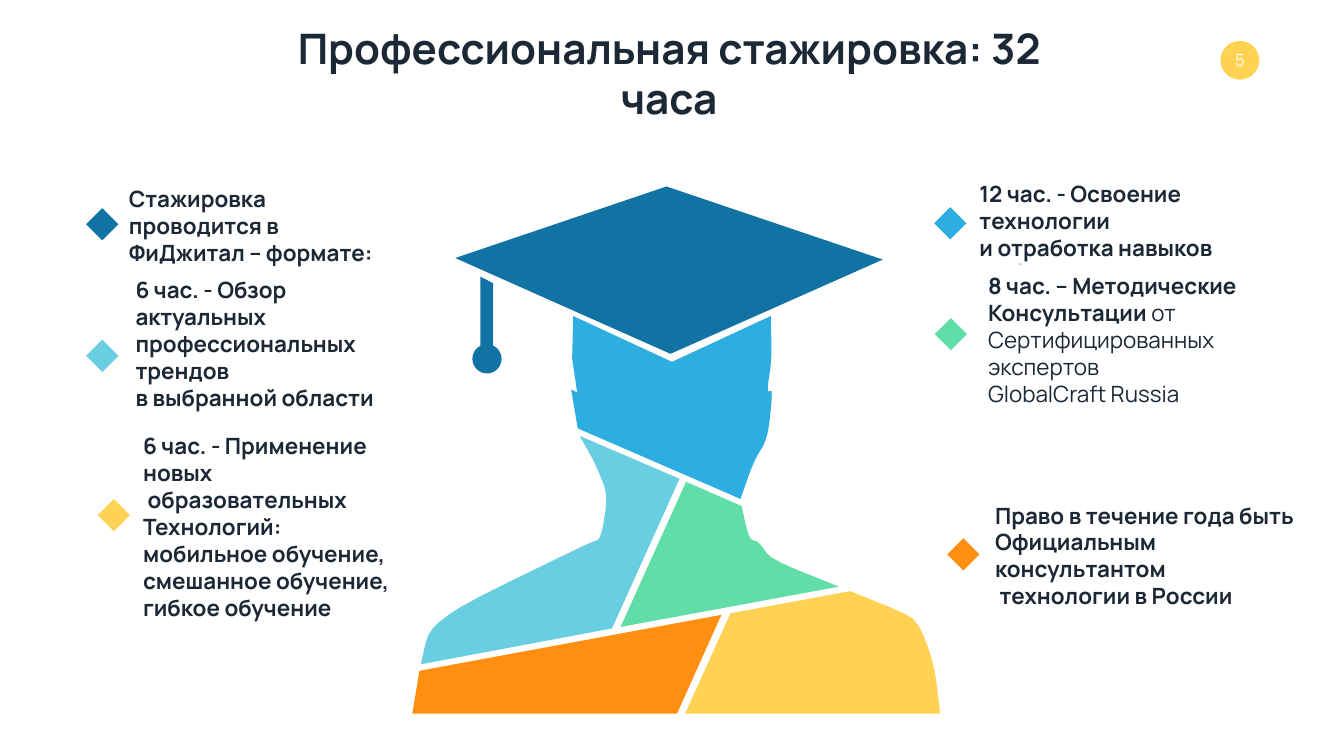
from dataclasses import dataclass
from itertools import pairwise

from pptx import Presentation
from pptx.dml.color import RGBColor
from pptx.enum.shapes import MSO_SHAPE
from pptx.enum.text import MSO_ANCHOR, PP_ALIGN
from pptx.shapes.base import BaseShape
from pptx.util import Inches, Pt

Point = tuple[float, float]

INK = "1C2835"
NAVY = "1073A3"
BLUE = "2DADE0"
AQUA = "6ACEE3"
GREEN = "61DDA8"
ORANGE = "FF8F10"
YELLOW = "FFD253"
DIAMOND_SIZE = 0.64
HEAD_AXIS = 13.33
SMOOTHING_PASSES = 2
CORNER_CUT = 0.2


@dataclass(frozen=True)
class Box:
    left: float
    top: float
    width: float
    height: float

    def lengths(self) -> tuple:
        return tuple(Inches(v) for v in (self.left, self.top, self.width, self.height))


@dataclass(frozen=True)
class Milestone:
    color: str
    diamond_left: float
    diamond_top: float
    box: Box
    lines: tuple[str, ...]


@dataclass(frozen=True)
class Piece:
    color: str
    cuts: tuple[Point, ...]
    silhouette: tuple[Point, ...] = ()


MILESTONES = (
    Milestone(NAVY, 1.71, 4.13, Box(2.46, 3.89, 5.36, 1.18),
              ("Стажировка проводится в", "ФиДжитал – формате:")),
    Milestone(AQUA, 1.71, 6.74, Box(2.59, 5.96, 5.83, 1.72),
              ("6 час. - Обзор актуальных", "профессиональных трендов",
               "в выбранной области")),
    Milestone(YELLOW, 1.94, 9.9, Box(2.74, 8.78, 5.47, 3.33),
              ("6 час. - Применение новых", " образовательных", "Технологий:",
               "мобильное обучение,", "смешанное обучение,", "гибкое обучение")),
    Milestone(BLUE, 18.53, 4.11, Box(19.33, 3.79, 6.17, 1.18),
              ("12 час. - Освоение технологии", "и отработка навыков")),
    Milestone(GREEN, 18.54, 6.31, Box(19.5, 5.61, 6.31, 2.26),
              ("8 час. – Методические", "Консультации |от",
               "|Сертифицированных экспертов", "|GlobalCraft Russia")),
    Milestone(ORANGE, 18.79, 10.68, Box(19.64, 10.16, 6.2, 1.72),
              ("Право в течение года быть", "Официальным консультантом",
               " технологии в России")),
)

TEMPLE_AND_EAR = ((15.29, 6.27), (15.31, 7.11), (15.21, 7.79), (15.33, 7.73))
LEFT_TEMPLE_AND_EAR = tuple((round(2 * HEAD_AXIS - x, 2), y) for x, y in TEMPLE_AND_EAR)
JAW = ((15.23, 8.69), (14.94, 9.18), (14.69, 9.9))

GRADUATE = (
    Piece(NAVY, ((13.22, 3.7), (9.03, 5.12), (13.3, 7.02), (17.51, 5.15))),
    Piece(NAVY, ((9.53, 5.49), (9.53, 6.95), (9.78, 6.95), (9.78, 5.62))),
    Piece(BLUE, ((11.46, 8.5), *reversed(LEFT_TEMPLE_AND_EAR), (HEAD_AXIS, 7.18)),
          TEMPLE_AND_EAR + JAW),
    Piece(AQUA, ((12.14, 12.47), (13.48, 9.5)),
          ((11.5, 8.65), (11.8, 9.18), (12.06, 9.82), (11.92, 10.7), (11.71, 10.76),
           (9.17, 12), (8.5, 12.5), (8.35, 13.18))),
    Piece(GREEN, ((13.61, 9.56), (12.31, 12.44)),
          ((16.64, 11.64), (15.3, 11.1), (15.05, 10.75), (14.86, 10.7), (14.71, 10.04))),
    Piece(ORANGE, ((14.31, 12.2), (8.32, 13.31), (8.18, 14.16), (13.43, 14.16))),
    Piece(YELLOW, ((14.49, 12.17), (13.59, 14.16)),
          ((18.65, 14.16), (18.53, 13.17), (18.2, 12.3), (17.64, 12.04), (16.86, 11.73))),
)


def rgb(color: str) -> RGBColor:
    return RGBColor.from_string(color)


def paint(shape: BaseShape, color: str) -> None:
    shape.fill.solid()
    shape.fill.fore_color.rgb = rgb(color)
    shape.line.fill.background()
    shape.shadow.inherit = False


def style_font(font, size: float, color: str, bold: bool = False,
               typeface: str = "Manrope") -> None:
    font.name = typeface
    font.size = Pt(size)
    font.bold = bold
    font.color.rgb = rgb(color)


def between(start: Point, end: Point, share: float) -> Point:
    return (start[0] + (end[0] - start[0]) * share,
            start[1] + (end[1] - start[1]) * share)


def smooth(points: tuple[Point, ...]) -> list[Point]:
    curve = list(points)
    for _ in range(SMOOTHING_PASSES if points else 0):
        softened = [between(start, end, share) for start, end in pairwise(curve)
                    for share in (CORNER_CUT, 1 - CORNER_CUT)]
        curve = [curve[0], *softened[1:-1], curve[-1]]
    return curve


def draw_piece(shapes, piece: Piece) -> None:
    outline = [(Inches(x), Inches(y))
               for x, y in [*piece.cuts, *smooth(piece.silhouette)]]
    builder = shapes.build_freeform(*outline[0])
    builder.add_line_segments(outline[1:])
    paint(builder.convert_to_shape(), piece.color)


def add_text(slide, box: Box, lines: tuple[str, ...], size: float, color: str = INK,
             typeface: str = "Manrope", anchor: MSO_ANCHOR = MSO_ANCHOR.TOP):
    frame = slide.shapes.add_textbox(*box.lengths()).text_frame
    frame.word_wrap = True
    frame.vertical_anchor = anchor
    for index, line in enumerate(lines):
        paragraph = frame.paragraphs[0] if index == 0 else frame.add_paragraph()
        strong, _, regular = line.partition("|")
        paragraph.text = strong
        for run in paragraph.runs:
            style_font(run.font, size, color, True, typeface)
        if regular:
            run = paragraph.add_run()
            run.text = regular
            style_font(run.font, size, color, False, typeface)
    return frame


def draw_milestone(slide, milestone: Milestone) -> None:
    marker = Box(milestone.diamond_left, milestone.diamond_top, DIAMOND_SIZE, DIAMOND_SIZE)
    paint(slide.shapes.add_shape(MSO_SHAPE.DIAMOND, *marker.lengths()), milestone.color)
    add_text(slide, milestone.box, milestone.lines, 32, anchor=MSO_ANCHOR.MIDDLE)


def main() -> None:
    presentation = Presentation()
    presentation.slide_width = Inches(26.66)
    presentation.slide_height = Inches(15)
    slide = presentation.slides.add_slide(presentation.slide_layouts[6])

    page_badge = slide.shapes.add_shape(MSO_SHAPE.OVAL, *Box(24.21, 0.81, 0.77, 0.77).lengths())
    paint(page_badge, "FFD252")
    page_badge.text_frame.text = "5"
    page_badge.text_frame.word_wrap = False
    page_badge.text_frame.vertical_anchor = MSO_ANCHOR.MIDDLE
    page_number = page_badge.text_frame.paragraphs[0]
    page_number.alignment = PP_ALIGN.CENTER
    style_font(page_number.runs[0].font, 24, "FFFFFF")

    title = add_text(slide, Box(5.63, 0.39, 15.29, 1.11),
                     ("Профессиональная стажировка: 32 часа",), 60)
    title.paragraphs[0].alignment = PP_ALIGN.CENTER

    graduate = slide.shapes.add_group_shape()
    for piece in GRADUATE:
        draw_piece(graduate.shapes, piece)
    tassel = Box(9.37, 6.83, 0.58, 0.58)
    paint(graduate.shapes.add_shape(MSO_SHAPE.OVAL, *tassel.lengths()), NAVY)

    for milestone in MILESTONES:
        draw_milestone(slide, milestone)

    full_stop = add_text(slide, Box(20.11, 4.8, 4.9, 0.54), ("|.",), 24, "B3B3B3", "Lato")
    full_stop.paragraphs[0].line_spacing = Pt(35)
    full_stop.paragraphs[0].space_before = Pt(5)
    presentation.save("out.pptx")


if __name__ == "__main__":
    main()
